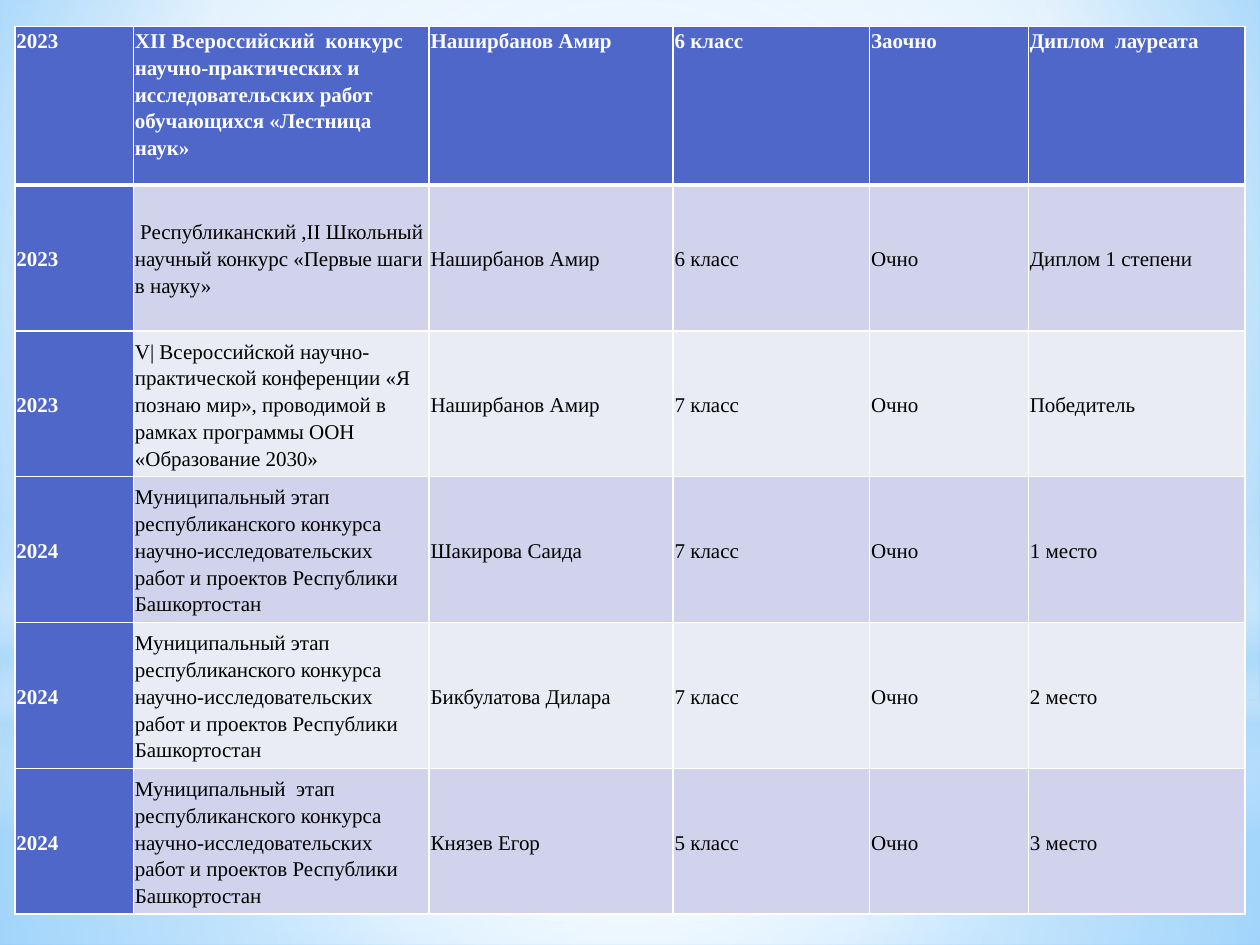
from dataclasses import dataclass

from lxml.etree import SubElement
from pptx import Presentation
from pptx.dml.color import RGBColor
from pptx.enum.shapes import MSO_SHAPE
from pptx.enum.text import MSO_ANCHOR
from pptx.oxml.ns import qn
from pptx.util import Cm, Pt


@dataclass(frozen=True)
class Theme:
    font: str = "Times New Roman"
    text_size: int = 12
    line_spacing: float = 1.15
    white: str = "FFFFFF"
    black: str = "000000"
    accent: str = "4E67C8"
    band_dark: str = "D0D3EB"
    band_light: str = "E9EBF5"
    sky: str = "9ED5FF"
    deep_sky: str = "5BB9FF"
    haze: str = "B4DCFA"
    thin: int = 1
    thick: int = 3


class SlideBuilder:
    def __init__(self, page, theme):
        self.page = page
        self.theme = theme

    def gradient(self, parent, stops, focus=None):
        solid = parent.find(qn("a:solidFill"))
        fill = SubElement(parent, qn("a:gradFill"), rotWithShape="1")
        stop_list = SubElement(fill, qn("a:gsLst"))
        for position, color, opacity in stops:
            stop = SubElement(stop_list, qn("a:gs"), pos=str(position * 1000))
            tone = SubElement(stop, qn("a:srgbClr"), val=color)
            if opacity < 100:
                SubElement(tone, qn("a:alpha"), val=str(opacity * 1000))
        if focus:
            circle = SubElement(fill, qn("a:path"), path="circle")
            sides = {side: str(value * 1000) for side, value in zip("ltrb", focus)}
            SubElement(circle, qn("a:fillToRect"), **sides)
        else:
            SubElement(fill, qn("a:lin"), ang="5400000", scaled="0")
        parent.replace(solid, fill)

    def background(self, stops, focus):
        self.page.background.fill.solid()
        self.gradient(self.page.element.find(".//" + qn("p:bgPr")), stops, focus)

    def glow(self, preset, top, height, stops, focus=None):
        shape = self.page.shapes.add_shape(preset, 0, Cm(top), Cm(25.4), Cm(height))
        shape.shadow.inherit = False
        shape.line.fill.background()
        shape.fill.solid()
        self.gradient(shape.element.spPr, stops, focus)

    def borders(self, cell, top, bottom):
        properties = cell._tc.get_or_add_tcPr()
        widths = {"L": self.theme.thin, "R": self.theme.thin, "T": top, "B": bottom}
        for index, (side, width) in enumerate(widths.items()):
            line = SubElement(properties, qn(f"a:ln{side}"), w=str(Pt(width)))
            fill = SubElement(line, qn("a:solidFill"))
            SubElement(fill, qn("a:srgbClr"), val=self.theme.white)
            properties.insert(index, line)

    def cell(self, cell, text, fill, color, bold, anchor):
        cell.margin_left = cell.margin_right = Cm(0.03)
        cell.margin_top = cell.margin_bottom = 0
        cell.vertical_anchor = anchor
        cell.fill.solid()
        cell.fill.fore_color.rgb = RGBColor.from_string(fill)
        cell.text_frame.text = text
        para = cell.text_frame.paragraphs[0]
        para.line_spacing = self.theme.line_spacing
        for span in para.runs:
            span.font.name = self.theme.font
            span.font.size = Pt(self.theme.text_size)
            span.font.bold = bold
            span.font.color.rgb = RGBColor.from_string(color)

    def table(self, left, top, widths, heights, rows):
        theme = self.theme
        table = self.page.shapes.add_table(
            len(rows), len(widths), Cm(left), Cm(top), Cm(sum(widths)), Cm(sum(heights))
        ).table
        for column, width in zip(table.columns, widths):
            column.width = Cm(width)
        for row, height in zip(table.rows, heights):
            row.height = Cm(height)
        for r, texts in enumerate(rows):
            band = theme.band_dark if r % 2 else theme.band_light
            anchor = MSO_ANCHOR.MIDDLE if r else MSO_ANCHOR.TOP
            for c, text in enumerate(texts):
                strong = r == 0 or c == 0
                cell = table.cell(r, c)
                self.cell(
                    cell,
                    text,
                    theme.accent if strong else band,
                    theme.white if strong else theme.black,
                    strong,
                    anchor,
                )
                self.borders(
                    cell,
                    theme.thick if r == 1 else theme.thin,
                    theme.thick if r == 0 else theme.thin,
                )


MUNICIPAL = (
    "Муниципальный этап республиканского конкурса "
    "научно-исследовательских работ и проектов Республики Башкортостан"
)
AWARDS = [
    ("2023", "XII Всероссийский  конкурс научно-практических и исследовательских "
     "работ обучающихся «Лестница наук»",
     "Наширбанов Амир", "6 класс", "Заочно", "Диплом  лауреата"),
    ("2023", " Республиканский ,II Школьный научный конкурс «Первые шаги в науку»",
     "Наширбанов Амир", "6 класс", "Очно", "Диплом 1 степени"),
    ("2023", "V| Всероссийской научно-практической конференции «Я познаю мир», "
     "проводимой в рамках программы ООН «Образование 2030»",
     "Наширбанов Амир", "7 класс", "Очно", "Победитель"),
    ("2024", MUNICIPAL, "Шакирова Саида", "7 класс", "Очно", "1 место"),
    ("2024", MUNICIPAL, "Бикбулатова Дилара", "7 класс", "Очно", "2 место"),
    ("2024", MUNICIPAL.replace(" этап", "  этап"),
     "Князев Егор", "5 класс", "Очно", "3 место"),
]


def main():
    theme = Theme()
    white, haze = theme.white, theme.haze
    center = (50, 50, 50, 50)
    deck = Presentation()
    deck.slide_width, deck.slide_height = Cm(25.4), Cm(19.05)
    builder = SlideBuilder(deck.slides.add_slide(deck.slide_layouts[6]), theme)

    builder.background(
        [(0, theme.sky, 100), (60, white, 100), (100, theme.deep_sky, 100)],
        (20, 10, 20, 60),
    )
    builder.glow(MSO_SHAPE.RECTANGLE, 14.17, 4.88,
                 [(0, white, 91), (37, white, 76), (100, haze, 79)], center)
    builder.glow(MSO_SHAPE.RECTANGLE, 0, 14.17,
                 [(0, white, 89), (48, white, 62), (100, haze, 79)], center)
    builder.glow(MSO_SHAPE.RECTANGLE, 10.46, 6.35,
                 [(0, white, 0), (29, white, 30), (45, haze, 40),
                  (55, white, 26), (65, haze, 60), (100, white, 0)])
    builder.glow(MSO_SHAPE.OVAL, 4.45, 14.17,
                 [(0, white, 100), (56, white, 0)], center)

    builder.table(0.3, 0.53, [2.39, 5.96, 4.92, 3.96, 3.2, 4.37],
                  [3.2] + [2.94] * 5, AWARDS)
    deck.save("out.pptx")


if __name__ == "__main__":
    main()
